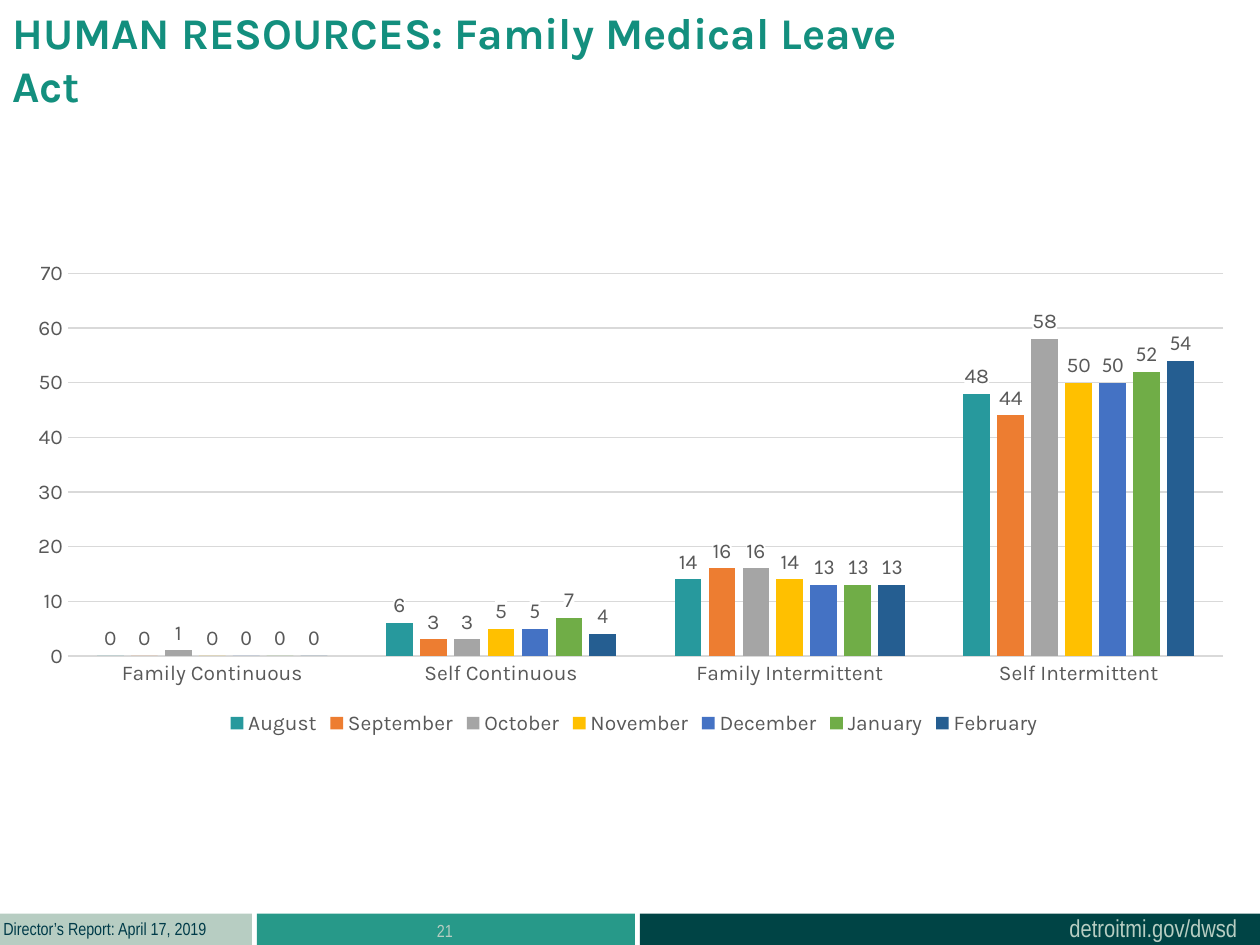
from lxml.etree import SubElement
from pptx import Presentation
from pptx.chart.data import CategoryChartData
from pptx.dml.color import RGBColor
from pptx.enum.chart import XL_CHART_TYPE, XL_LABEL_POSITION, XL_LEGEND_POSITION, XL_TICK_MARK
from pptx.enum.shapes import MSO_SHAPE
from pptx.enum.text import PP_ALIGN
from pptx.oxml import parse_xml
from pptx.oxml.ns import nsdecls, qn
from pptx.util import Cm, Pt

COLORS = {
    "teal": "279989", "dark": "004445", "sage": "B7CDC2", "navy": "003B49",
    "title": "138F7E", "label": "595959", "grid": "D9D9D9", "white": "FFFFFF",
    "August": "27999D", "September": "ED7D31", "October": "A5A5A5",
    "November": "FFC000", "December": "4472C4", "January": "70AD47",
    "February": "255E91",
}
CATEGORIES = ["Family Continuous", "Self Continuous",
              "Family Intermittent", "Self Intermittent"]
LEAVES = {
    "August": (0, 6, 14, 48),
    "September": (0, 3, 16, 44),
    "October": (1, 3, 16, 58),
    "November": (0, 5, 14, 50),
    "December": (0, 5, 13, 50),
    "January": (0, 7, 13, 52),
    "February": (0, 4, 13, 54),
}
CALIBRI_LABELS = {"December", "January", "February"}
PLOT_AREA = {"x": 0.035, "y": 0.039, "w": 0.949, "h": 0.787}


def color(name):
    return RGBColor.from_string(COLORS[name])


class ReportPage:
    heading_font = "Karla"
    footer_font = "Arial Narrow"

    def __init__(self, deck):
        self.page = deck.slides.add_slide(deck.slide_layouts[6])

    def style(self, font, name, size, fill, bold=False):
        font.name, font.size, font.bold = name, Pt(size), bold
        font.color.rgb = color(fill)

    def band(self, left, width, fill):
        band = self.page.shapes.add_shape(
            MSO_SHAPE.RECTANGLE, Cm(left), Cm(18.42), Cm(width), Cm(0.64))
        band.shadow.inherit = False
        band.fill.solid()
        band.fill.fore_color.rgb = color(fill)
        band.line.fill.background()

    def text(self, words, place, font, size, fill, bold=False, wrap=True,
             align=PP_ALIGN.LEFT):
        box = self.page.shapes.add_textbox(*map(Cm, place))
        box.text_frame.word_wrap = wrap
        box.text_frame.text = words
        para = box.text_frame.paragraphs[0]
        para.alignment = align
        self.style(para.runs[0].font, font, size, fill, bold)

    def column_chart(self, place):
        data = CategoryChartData()
        data.categories = CATEGORIES
        for month, counts in LEAVES.items():
            data.add_series(month, counts)
        chart = self.page.shapes.add_chart(
            XL_CHART_TYPE.COLUMN_CLUSTERED, *map(Cm, place), data).chart
        chart.has_title = False
        self.style(chart.font, self.heading_font, 12, "label")
        chart.has_legend = True
        chart.legend.position = XL_LEGEND_POSITION.BOTTOM
        chart.legend.include_in_layout = False
        self.style(chart.legend.font, self.heading_font, 12, "label")
        self.axes(chart)
        plot = chart.plots[0]
        plot.gap_width, plot.overlap, plot.vary_by_categories = 219, -27, False
        for series in plot.series:
            self.series(series)
        self.fix_plot_area(chart)

    def axes(self, chart):
        for axis in (chart.category_axis, chart.value_axis):
            axis.major_tick_mark = axis.minor_tick_mark = XL_TICK_MARK.NONE
            self.style(axis.tick_labels.font, self.heading_font, 12, "label")
        values = chart.value_axis
        values.minimum_scale, values.maximum_scale, values.major_unit = 0, 70, 10
        values.format.line.fill.background()
        for line in (chart.category_axis.format.line,
                     values.major_gridlines.format.line):
            line.color.rgb = color("grid")
            line.width = Pt(0.75)

    def series(self, series):
        series.format.fill.solid()
        series.format.fill.fore_color.rgb = color(series.name)
        labels = series.data_labels
        labels.show_value = True
        labels.position = XL_LABEL_POSITION.OUTSIDE_END
        font = "Calibri" if series.name in CALIBRI_LABELS else self.heading_font
        self.style(labels.font, font, 12, "label")
        self.label_background(series)

    def label_background(self, series):
        """Keep gridlines from running through the value labels."""
        text_style = series._element.find(qn("c:dLbls")).find(qn("c:txPr"))
        text_style.addprevious(parse_xml(
            f'<c:spPr {nsdecls("c", "a")}><a:solidFill>'
            f'<a:srgbClr val="{COLORS["white"]}"/></a:solidFill></c:spPr>'))

    def fix_plot_area(self, chart):
        """Place the inner plot area by fractions of the chart's size."""
        area = chart._chartSpace.chart.plotArea
        for old in area.findall(qn("c:layout")):
            area.remove(old)
        layout = parse_xml(f'<c:layout {nsdecls("c")}><c:manualLayout/></c:layout>')
        settings = {"layoutTarget": "inner", "xMode": "edge", "yMode": "edge",
                    **PLOT_AREA}
        for tag, value in settings.items():
            SubElement(layout[0], qn(f"c:{tag}")).set("val", str(value))
        area.insert(0, layout)


def main():
    deck = Presentation()
    deck.slide_width, deck.slide_height = Cm(25.4), Cm(19.05)
    report = ReportPage(deck)
    report.band(5.18, 7.62, "teal")
    report.band(12.9, 12.7, "dark")
    report.band(0, 5.08, "sage")
    footer = report.footer_font
    report.text("detroitmi.gov/dwsd", (21.31, 18.29, 3.94, 0.86),
                footer, 14, "sage", wrap=False)
    report.text("Director’s Report: April 17, 2019", (-0.18, 18.39, 4.72, 0.69),
                footer, 10, "navy", wrap=False)
    report.text("21", (5.16, 18.42, 7.62, 1.02), footer, 10, "sage",
                align=PP_ALIGN.CENTER)
    report.text("HUMAN RESOURCES: Family Medical Leave Act", (0, 0, 19.28, 1.96),
                report.heading_font, 25, "title", bold=True)
    report.column_chart((0.51, 5.13, 24.54, 9.8))
    deck.save("out.pptx")


if __name__ == "__main__":
    main()
